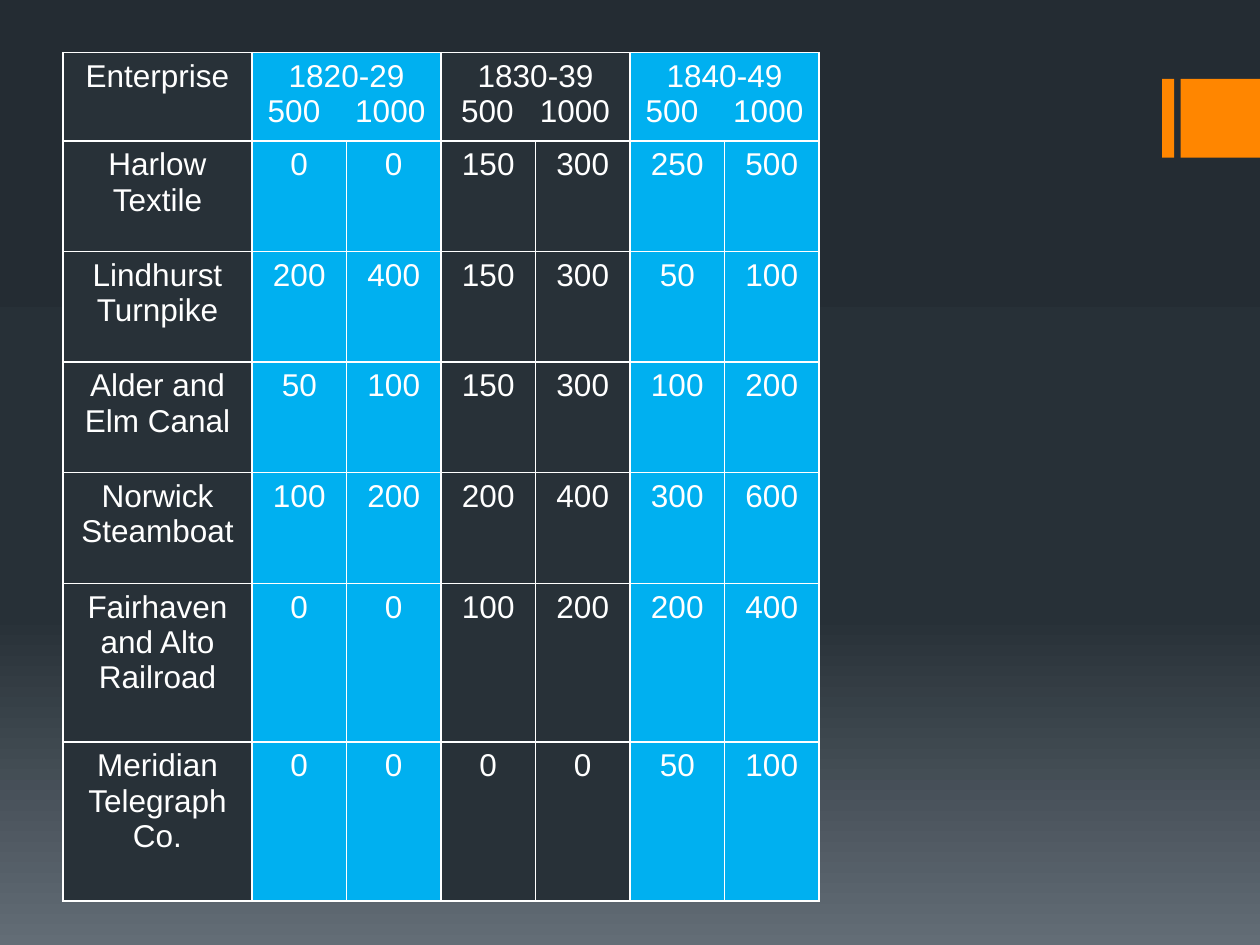
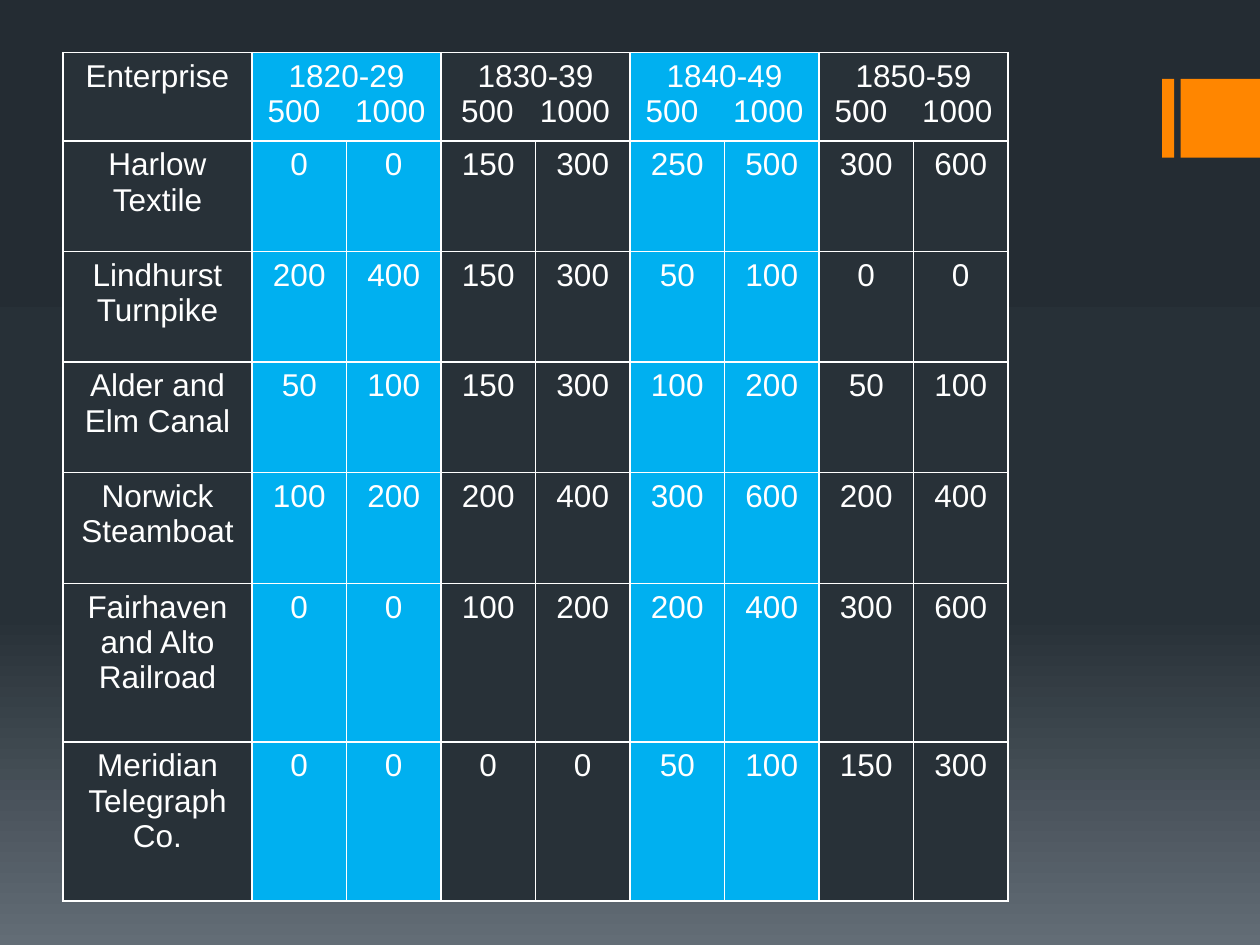
from copy import deepcopy

from lxml import etree
from pptx import Presentation
from pptx.dml.color import RGBColor
from pptx.enum.shapes import MSO_SHAPE
from pptx.enum.text import PP_ALIGN
from pptx.oxml.ns import qn
from pptx.util import Cm, Pt

RECT = MSO_SHAPE.RECTANGLE
CENTER = PP_ALIGN.CENTER

THEME = {
    "font": "Arial",
    "size": Pt(18),
    "text": "FFFFFF",
    "rule": Pt(1),
    "dark": "283138",
    "blue": "00B0F0",
    "accent": "FF8600",
    "back": [(0, "242C33"), (0.65, "273037"), (1, "636D76")],
}

# Each decade: name and extra points between "500" and "1000"
DECADES = [("1820-29", 15), ("1830-39", 10), ("1840-49", 15), ("1850-59", 15)]

# Returns on 500 for each decade; 1000 returns twice as much
FIRMS = [
    ("Harlow Textile", 0, 150, 250, 300),
    ("Lindhurst Turnpike", 200, 150, 50, 0),
    ("Alder and Elm Canal", 50, 150, 100, 50),
    ("Norwick Steamboat", 100, 200, 300, 200),
    ("Fairhaven and Alto Railroad", 0, 100, 200, 300),
    ("Meridian Telegraph Co.", 0, 0, 50, 150),
]

HEIGHTS = [1.78] + [2.23] * 4 + [3.2] * 2
WIDE = Cm(3.81)


def write(para, text, align=CENTER, gap=0):
    """Add a themed run; gap is extra letter spacing in points."""
    para.alignment = align
    run = para.add_run()
    run.text = text
    run.font.name = THEME["font"]
    run.font.size = THEME["size"]
    run.font.color.rgb = RGBColor.from_string(THEME["text"])
    if gap:
        run._r.get_or_add_rPr().set("spc", str(gap * 100))


def style(cell, color):
    """Give a cell its four borders and its fill."""
    props = cell._tc.get_or_add_tcPr()
    for side in ("lnL", "lnR", "lnT", "lnB"):
        line = etree.SubElement(props, qn("a:" + side), w=str(THEME["rule"]))
        paint = etree.SubElement(line, qn("a:solidFill"))
        etree.SubElement(paint, qn("a:srgbClr"), val=THEME["text"])
    cell.fill.solid()
    cell.fill.fore_color.rgb = RGBColor.from_string(color)


deck = Presentation()
deck.slide_width, deck.slide_height = Cm(25.4), Cm(19.05)

# Shared gradient background
master = deck.slide_master
fill = master.background.fill
fill.gradient()
fill.gradient_angle = 270
stops = master.element.find(".//" + qn("a:gsLst"))
stops.append(deepcopy(stops[-1]))
for stop, (place, color) in zip(fill.gradient_stops, THEME["back"]):
    stop.position = place
    stop.color.rgb = RGBColor.from_string(color)

# One slide per number of decades
for count in (3, 4):
    slide = deck.slides.add_slide(deck.slide_layouts[6])

    # Accent bars at the right edge
    for left, width in ((23.43, 0.24), (23.8, 1.6)):
        bar = slide.shapes.add_shape(RECT, Cm(left), Cm(1.59), Cm(width), Cm(1.59))
        bar.shadow.inherit = False
        bar.fill.solid()
        bar.fill.fore_color.rgb = RGBColor.from_string(THEME["accent"])
        bar.line.fill.background()

    # Table grid
    table = slide.shapes.add_table(
        len(HEIGHTS), 1 + 2 * count, Cm(1.27), Cm(1.06),
        WIDE * (1 + count), Cm(sum(HEIGHTS))).table
    table.first_row = table.horz_banding = False
    for row, height in zip(table.rows, HEIGHTS):
        row.height = Cm(height)
        for col, cell in enumerate(row.cells):
            style(cell, THEME["blue" if col % 4 in (1, 2) else "dark"])
    for col, column in enumerate(table.columns):
        column.width = WIDE // 2 if col else WIDE

    # Header row
    write(table.cell(0, 0).text_frame.paragraphs[0], "Enterprise")
    for n, (name, gap) in enumerate(DECADES[:count]):
        head = table.cell(0, 1 + 2 * n)
        head.merge(table.cell(0, 2 + 2 * n))
        write(head.text_frame.paragraphs[0], name)
        sums = head.text_frame.add_paragraph()
        write(sums, "500")
        write(sums, " ", gap=gap)
        write(sums, "1000")

    # Firms and their returns
    for r, (firm, *gains) in enumerate(FIRMS, 1):
        pairs = [gain * k for gain in gains[:count] for k in (1, 2)]
        for c, value in enumerate([firm] + pairs):
            write(table.cell(r, c).text_frame.paragraphs[0], str(value))

deck.save("out.pptx")
